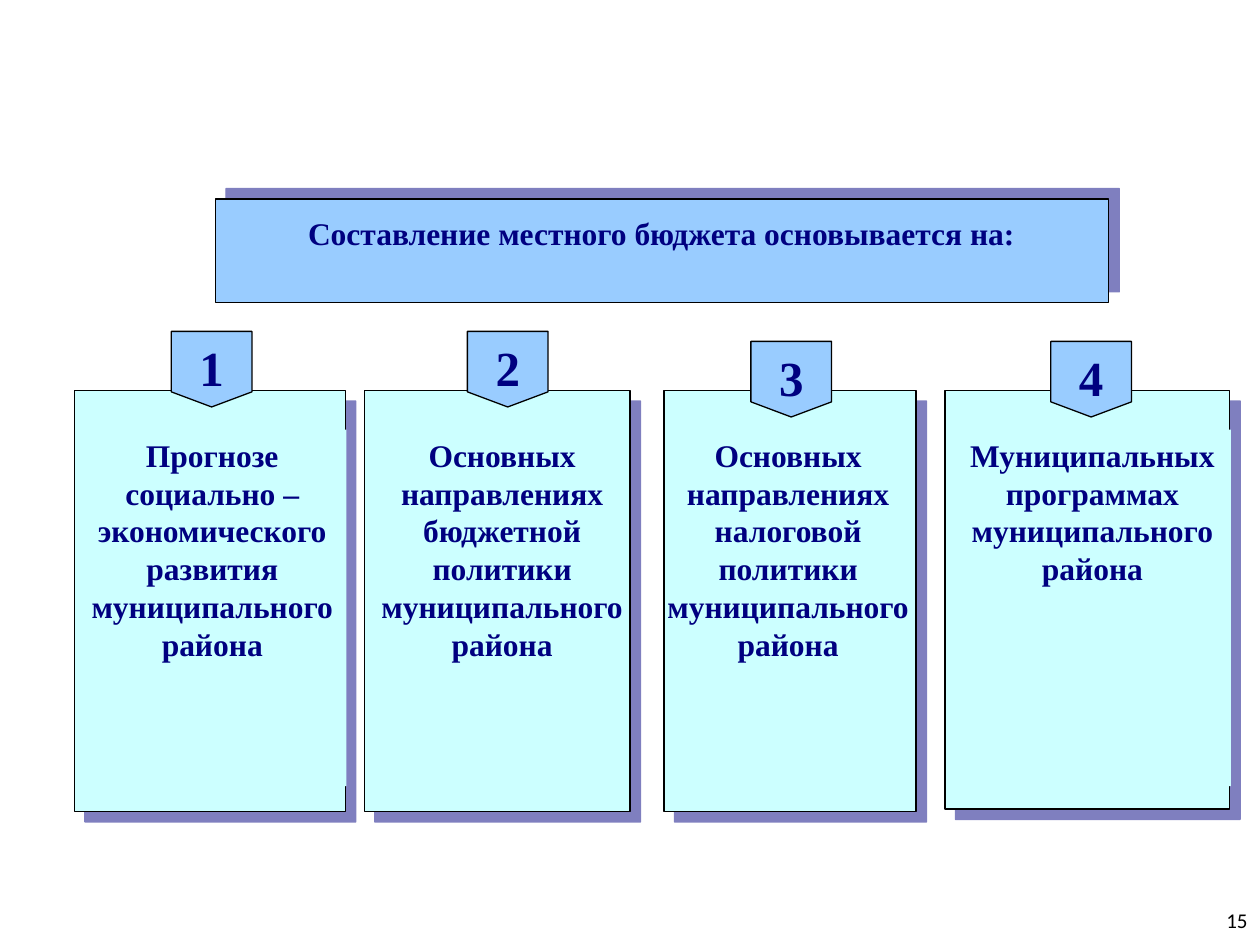
from pptx import Presentation
from pptx.dml.color import RGBColor
from pptx.enum.shapes import MSO_SHAPE as Kind
from pptx.enum.text import MSO_ANCHOR as Anchor, MSO_AUTO_SIZE as Fit, PP_ALIGN as Align
from pptx.oxml import parse_xml
from pptx.oxml.ns import nsdecls
from pptx.util import Inches, Pt

WIDE, HIGH = Inches(10), Inches(7.5)
SERIF, NAVY, BLUE, AQUA = "Times New Roman", "000080", "99CCFF", "CCFFFF"


def color(code):
    return RGBColor.from_string(code)


def place(box):
    x, y, w, h = box
    return [round(part * side / 100) for part, side in
            ((x, WIDE), (y, HIGH), (w, WIDE), (h, HIGH))]


def write(shape, lines, size=18, font=SERIF, ink=NAVY, bold=True,
          align=Align.CENTER, anchor=Anchor.TOP):
    frame = shape.text_frame
    frame.word_wrap = True
    frame.auto_size = Fit.NONE
    frame.vertical_anchor = anchor
    for index, line in enumerate(lines):
        para = frame.add_paragraph() if index else frame.paragraphs[0]
        para.alignment = align
        para.line_spacing = 1.0
        para.space_before = Pt(0)
        run = para.add_run()
        run.text = line
        run.font.name = font
        run.font.size = Pt(size)
        run.font.bold = bold
        run.font.color.rgb = color(ink)


def draw(slide, kind, box, fill, edge=True):
    shape = slide.shapes.add_shape(kind, *place(box))
    shape.shadow.inherit = False
    shape.fill.solid()
    shape.fill.fore_color.rgb = color(fill)
    if edge:
        shape.line.color.rgb = color("000000")
        shape.line.width = Pt(0.75)
    else:
        shape.line.fill.background()
    return shape


def shade(shape, angle):
    effect = shape._element.spPr.find(
        "{http://schemas.openxmlformats.org/drawingml/2006/main}effectLst")
    effect.append(parse_xml(
        f'<a:outerShdw {nsdecls("a")} dist="{Pt(8.5)}" dir="{angle * 60000}" '
        f'algn="ctr" rotWithShape="0"><a:srgbClr val="{NAVY}">'
        '<a:alpha val="50000"/></a:srgbClr></a:outerShdw>'))


def header(slide, box, words):
    x, y, w, h = box
    shade(draw(slide, Kind.FLOWCHART_PROCESS, box, BLUE), 315)
    title = slide.shapes.title
    title.left, title.top, title.width, title.height = place(
        (x + 0.7, y + 0.93, w - 1.5, h - 1.6))
    slide.shapes._spTree.append(title._element)
    write(title, [words])


def card(slide, box, shift, span, solid, lines):
    x, y, w, h = box
    shade(draw(slide, Kind.FLOWCHART_PROCESS, box, AQUA), 45)
    area = (x + shift, y + 4.13, span, 37.73)
    if solid:
        body = draw(slide, Kind.RECTANGLE, area, AQUA, False)
    else:
        body = slide.shapes.add_textbox(*place(area))
    write(body, lines)


def badge(slide, box, mark):
    write(draw(slide, Kind.FLOWCHART_OFFPAGE_CONNECTOR, box, BLUE), [mark], 28)


def footer(slide, box, mark):
    write(slide.shapes.add_textbox(*place(box)), [mark], 12, "Calibri",
          "000000", False, Align.RIGHT, Anchor.MIDDLE)


CARDS = [
    (5.9, 21.5, 44.53, 0.3, 21.3, True, 13.6, 35.07,
     ["Прогнозе", "социально –", "экономического", "развития",
      "муниципального района"]),
    (28.9, 21.1, 44.53, 0, 21.9, False, 37.1, 35.07,
     ["Основных", "направлениях", "бюджетной",
      "политики муниципального района"]),
    (52.7, 20, 44.53, -1.1, 21.9, False, 59.6, 36.13,
     ["Основных", "направлениях", "налоговой",
      "политики муниципального района"]),
    (75, 22.6, 44.27, 0.7, 22, True, 83.4, 36.13,
     ["Муниципальных", "программах муниципального района"]),
]


def main():
    deck = Presentation()
    deck.slide_width, deck.slide_height = WIDE, HIGH
    slide = deck.slides.add_slide(deck.slide_layouts[5])
    footer(slide, (94.1, 94.67, 5.9, 5.33), "15")
    header(slide, (17.1, 21.07, 70.9, 10.93),
           "Составление местного бюджета основывается на:")
    for index, (x, w, h, shift, span, solid, left, top, lines) in enumerate(CARDS, 1):
        card(slide, (x, 41.33, w, h), shift, span, solid, lines)
        badge(slide, (left, top, 6.4, 8), str(index))
    deck.save("out.pptx")


if __name__ == "__main__":
    main()
